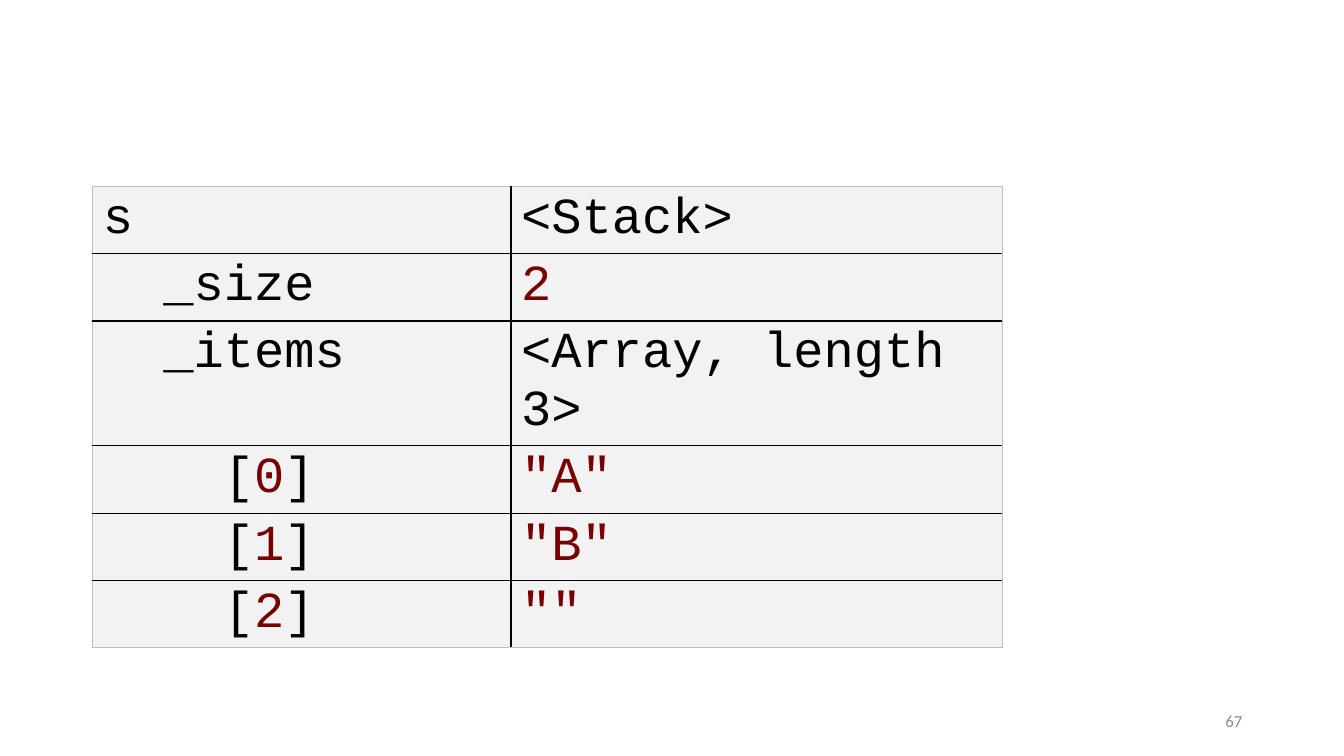
from dataclasses import dataclass

import pptx
import pptx.dml.color
import pptx.enum.text
import pptx.oxml
import pptx.oxml.ns
import pptx.util

WIDE = pptx.util.Inches(13.33)
HIGH = pptx.util.Inches(7.5)
BLACK, RED, PALE, EDGE, GREY = "000000", "780000", "F2F2F2", "BFBFBF", "8C8C8C"
MONO = "Courier New"
INDENT = 4.5  # percent of slide width per nesting level
MARGIN = 0.75
COLUMNS = (31.13, 36.53)
LINE, DOUBLE = 8.87, 16.53  # row heights, percent of slide height


@dataclass(frozen=True)
class Span:
    text: str
    color: str = BLACK


@dataclass(frozen=True)
class Field:
    depth: int
    name: tuple[Span, ...]
    value: Span
    height: float = LINE


def across(share: float) -> int:
    return round(WIDE * share / 100)


def down(share: float) -> int:
    return round(HIGH * share / 100)


def paint(color: str) -> pptx.dml.color.RGBColor:
    return pptx.dml.color.RGBColor.from_string(color)


def write(frame, text: str, *, font: str, size: float, color: str, align=None) -> None:
    """Append a formatted run to the first paragraph of a frame."""
    para = frame.paragraphs[0]
    if align is not None:
        para.alignment = align
    run = para.add_run()
    run.text = text
    run.font.name = font
    run.font.size = pptx.util.Pt(size)
    run.font.color.rgb = paint(color)


def border(cell, sides: dict[str, tuple[str, float]]) -> None:
    props = cell._tc.get_or_add_tcPr()
    space = pptx.oxml.ns.nsdecls("a")
    for spot, side in enumerate("LRTB"):
        color, width = sides[side]
        props.insert(spot, pptx.oxml.parse_xml(
            f'<a:ln{side} {space} w="{pptx.util.Pt(width)}"><a:solidFill>'
            f'<a:srgbClr val="{color}"/></a:solidFill></a:ln{side}>'))


def draw_cell(cell, spans: tuple[Span, ...], depth: int) -> None:
    cell.fill.solid()
    cell.fill.fore_color.rgb = paint(PALE)
    cell.margin_left = across(MARGIN + INDENT * depth)
    for span in spans:
        write(cell.text_frame, span.text, font=MONO, size=36, color=span.color)


def draw_table(slide, fields: list[Field]) -> None:
    frame = slide.shapes.add_table(
        len(fields), len(COLUMNS), across(6.9), down(24.67),
        across(sum(COLUMNS)), down(sum(field.height for field in fields)))
    table = frame.table
    table.first_row = table.horz_banding = False
    for column, width in zip(table.columns, COLUMNS):
        column.width = across(width)
    outer, rule, split = (EDGE, 0.5), (BLACK, 1), (BLACK, 1.5)
    last = len(fields) - 1
    for row, field in enumerate(fields):
        table.rows[row].height = down(field.height)
        parts = ((field.name, field.depth), ((field.value,), 0))
        for col, (spans, depth) in enumerate(parts):
            cell = table.cell(row, col)
            draw_cell(cell, spans, depth)
            border(cell, {
                "L": split if col else outer,
                "R": outer if col else split,
                "T": rule if row else outer,
                "B": rule if row < last else outer,
            })


def draw_number(slide, text: str) -> None:
    box = slide.shapes.add_textbox(across(70.67), down(92.67), across(22.5), down(5.33))
    frame = box.text_frame
    frame.word_wrap = True
    frame.vertical_anchor = pptx.enum.text.MSO_ANCHOR.MIDDLE
    write(frame, text, font="Calibri", size=12, color=GREY,
          align=pptx.enum.text.PP_ALIGN.RIGHT)


def main() -> None:
    deck = pptx.Presentation()
    deck.slide_width, deck.slide_height = WIDE, HIGH
    slide = deck.slides.add_slide(deck.slide_layouts[6])

    # Stack object and its fields
    fields = [
        Field(0, (Span("s"),), Span("<Stack>")),
        Field(1, (Span("_size"),), Span("2", RED)),
        Field(1, (Span("_items"),), Span("<Array, length 3>"), DOUBLE),
    ]
    # Array items
    for index, item in enumerate(('"A"', '"B"', '""')):
        label = (Span("["), Span(str(index), RED), Span("]"))
        fields.append(Field(2, label, Span(item, RED)))

    draw_table(slide, fields)
    draw_number(slide, "67")
    deck.save("out.pptx")


if __name__ == "__main__":
    main()
